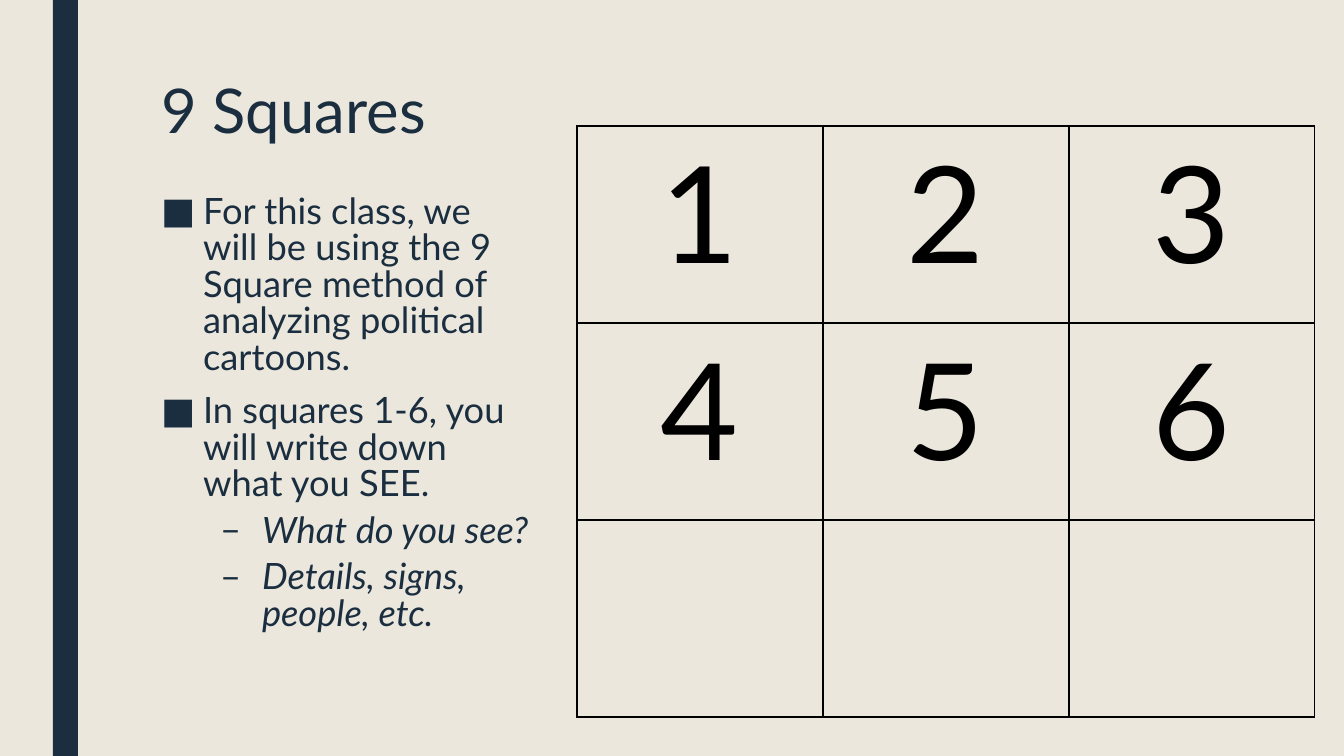
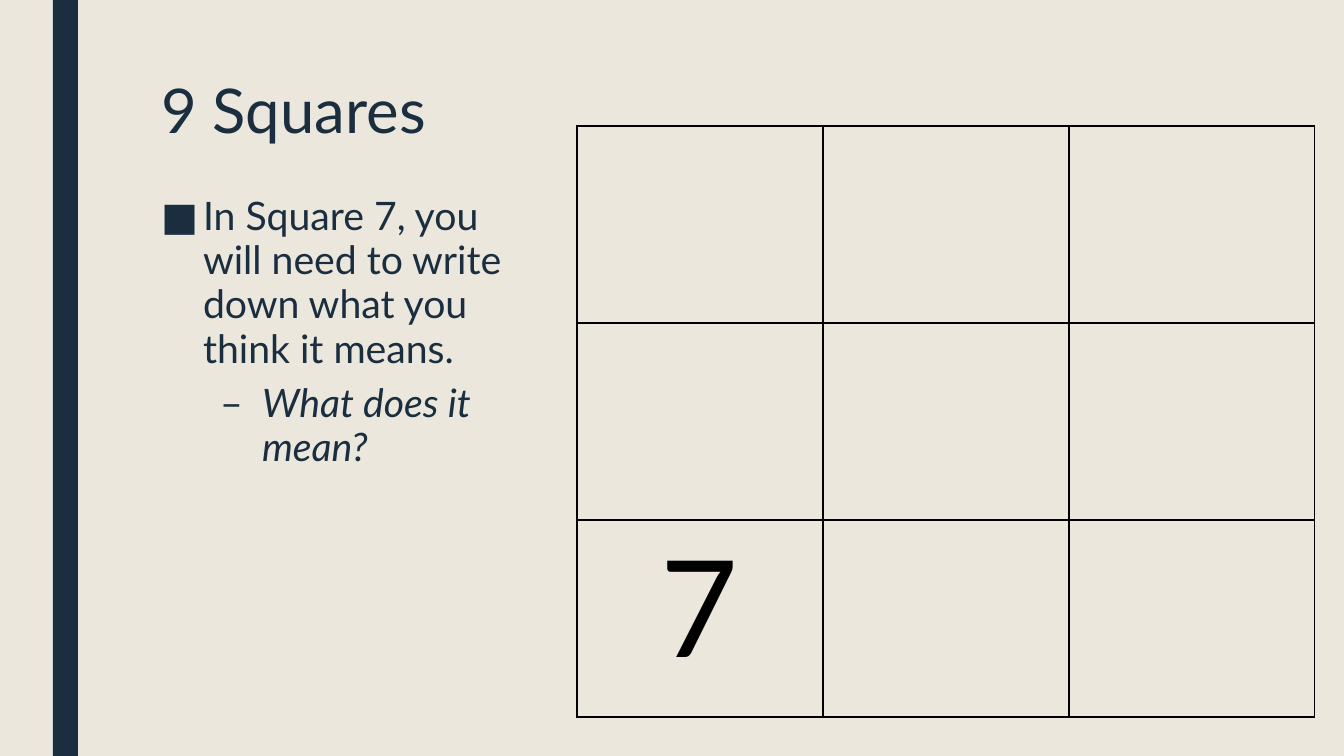
from pptx import Presentation
from pptx.dml.color import RGBColor
from pptx.enum.shapes import MSO_SHAPE as Shape
from pptx.enum.text import MSO_ANCHOR as Anchor, MSO_AUTO_SIZE as AutoSize, PP_ALIGN as Align
from pptx.oxml.ns import qn
from pptx.util import Emu, Pt
from lxml.etree import SubElement

# Content: bullets are (level, text); squares maps a cell number to its label
TITLE = "9 Squares"
PAGES = [
    dict(
        size=25.9, spacing=0.84, squares=range(1, 7),
        bullets=[
            (0, "For this class, we will be using the 9 Square method of analyzing political cartoons."),
            (0, "In squares 1-6, you will write down what you SEE."),
            (1, "What do you see?"),
            (1, "Details, signs, people, etc."),
        ],
    ),
    dict(
        size=28, spacing=0.94, squares=[7],
        bullets=[
            (0, "In Square 7, you will need to write down what you think it means."),
            (1, "What does it mean?"),
        ],
    ),
]

# Shared look
FONT = "Lato"
NAVY = RGBColor(0x1A, 0x2E, 0x40)
CREAM = RGBColor(0xEB, 0xE7, 0xDD)
BLACK = RGBColor(0x00, 0x00, 0x00)

# Layout in px (left, top, width, height)
SLIDE_WIDTH, SLIDE_HEIGHT = 1344, 756
BAR = (53, 0, 25, SLIDE_HEIGHT)
TITLE_BOX = (151, 76, 1058, 102)
BODY_BOX = (151, 190, 390, 507)
GRID_LEFT, GRID_TOP = 577, 126
CELL_WIDTH, CELL_HEIGHT = 246, 197
GRID_SIZE = 3
HANGING = 42
# Per level: bullet, left margin in px, space before in points
LEVELS = [("■", 42, 10), ("–", 101, 5)]


def px(length):
    return Emu(round(length * 914400 / 100.8))


def place(shape, area):
    shape.left, shape.top, shape.width, shape.height = map(px, area)


def write(para, text, size, color=NAVY, italic=False, align=Align.LEFT, spacing=None):
    para.alignment = align
    para.line_spacing = spacing
    span = para.add_run()
    span.text = text
    font = span.font
    font.name, font.size, font.italic = FONT, Pt(size), italic
    font.color.rgb = color


def prepare(box, area):
    place(box, area)
    frame = box.text_frame
    frame.word_wrap = True
    frame.auto_size = AutoSize.NONE
    frame.vertical_anchor = Anchor.TOP
    return frame


def set_bullet(para, level):
    mark, margin, before = LEVELS[level]
    para.level = level
    para.space_before, para.space_after = Pt(before), Pt(2)
    props = para._p.get_or_add_pPr()
    props.set("marL", str(px(margin)))
    props.set("indent", str(px(-HANGING)))
    SubElement(props, qn("a:buFont"), typeface=FONT)
    SubElement(props, qn("a:buChar"), char=mark)


def set_borders(cell):
    props = cell._tc.get_or_add_tcPr()
    for side in ("lnL", "lnR", "lnT", "lnB"):
        line = SubElement(props, qn(f"a:{side}"), w=str(Pt(1)))
        fill = SubElement(line, qn("a:solidFill"))
        SubElement(fill, qn("a:srgbClr"), val=str(BLACK))


def add_bar(page, master):
    """Draw the side bar and move it to the master, shared by all slides."""
    bar = page.shapes.add_shape(Shape.RECTANGLE, *map(px, BAR))
    bar.shadow.inherit = False
    bar.fill.solid()
    bar.fill.fore_color.rgb = NAVY
    bar.line.fill.background()
    master.shapes.element.append(bar.element)


def add_bullets(box, bullets, size, spacing):
    frame = prepare(box, BODY_BOX)
    for index, (level, text) in enumerate(bullets):
        para = frame.add_paragraph() if index else frame.paragraphs[0]
        write(para, text, size, italic=level > 0, spacing=spacing)
        set_bullet(para, level)


def add_grid(page, squares):
    area = (GRID_LEFT, GRID_TOP, GRID_SIZE * CELL_WIDTH, GRID_SIZE * CELL_HEIGHT)
    table = page.shapes.add_table(GRID_SIZE, GRID_SIZE, *map(px, area)).table
    table.first_row = table.horz_banding = False
    for column in table.columns:
        column.width = px(CELL_WIDTH)
    for row in table.rows:
        row.height = px(CELL_HEIGHT)
    for number, cell in enumerate(table.iter_cells(), start=1):
        set_borders(cell)
        cell.fill.background()
        if number in squares:
            write(cell.text_frame.paragraphs[0], str(number), 96, color=BLACK, align=Align.CENTER)


def main():
    deck = Presentation()
    deck.slide_width, deck.slide_height = px(SLIDE_WIDTH), px(SLIDE_HEIGHT)
    master = deck.slide_master
    master.background.fill.solid()
    master.background.fill.fore_color.rgb = CREAM

    for index, content in enumerate(PAGES):
        page = deck.slides.add_slide(deck.slide_layouts[1])
        if index == 0:
            add_bar(page, master)
        title = prepare(page.shapes.title, TITLE_BOX)
        write(title.paragraphs[0], TITLE, 44, spacing=0.89)
        add_bullets(page.placeholders[1], content["bullets"], content["size"], content["spacing"])
        add_grid(page, content["squares"])

    deck.save("out.pptx")


if __name__ == "__main__":
    main()
